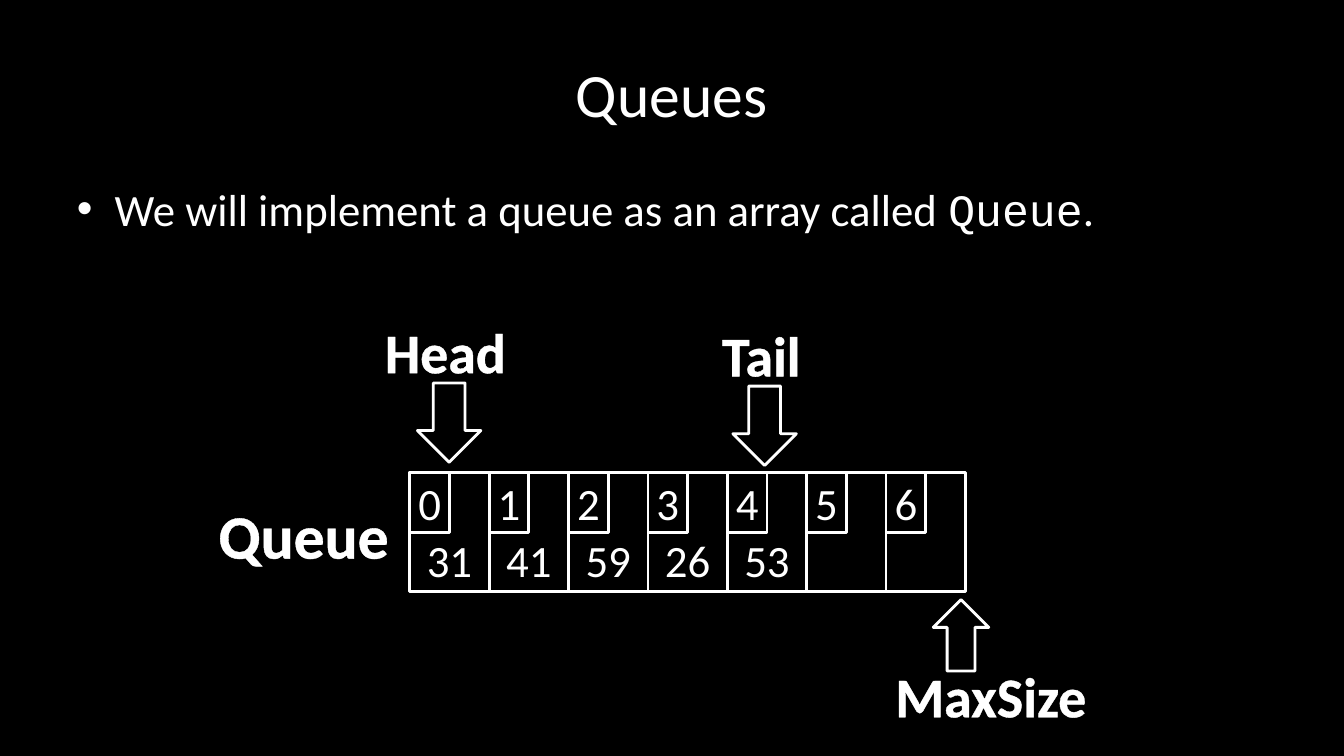
from lxml.etree import SubElement
from pptx import Presentation
from pptx.dml.color import RGBColor
from pptx.enum.shapes import MSO_SHAPE
from pptx.enum.text import MSO_ANCHOR, PP_ALIGN
from pptx.oxml.ns import qn
from pptx.util import Cm, Pt

BLACK = RGBColor(0x00, 0x00, 0x00)
WHITE = RGBColor(0xFF, 0xFF, 0xFF)
BODY_FONT = "Calibri"
CODE_FONT = "Courier New"

# Array geometry in centimetres
VALUES = ["31", "41", "59", "26", "53", "", ""]
ARRAY_LEFT, ARRAY_TOP = 10.33, 11.91
CELL_WIDTH, CELL_HEIGHT = 2, 3


def add_bullet(paragraph):
    properties = paragraph._p.get_or_add_pPr()
    properties.set("marL", str(Cm(0.95)))
    properties.set("indent", str(Cm(-0.95)))
    SubElement(properties, qn("a:buFont"), typeface="Arial")
    SubElement(properties, qn("a:buChar"), char="•")


def outline_run(run):
    line = SubElement(run.font._element, qn("a:ln"), w=str(Pt(1.4)))
    fill = SubElement(line, qn("a:solidFill"))
    SubElement(fill, qn("a:srgbClr"), val=str(WHITE))


def set_text(shape, *runs, size=32, bold=False, outline=False, bullet=False,
             align=PP_ALIGN.CENTER, anchor=MSO_ANCHOR.MIDDLE, wrap=True,
             side_margin=0.25):
    """Fill a shape with one paragraph; each run is a (text, font) pair."""
    frame = shape.text_frame
    frame.word_wrap = wrap
    frame.vertical_anchor = anchor
    frame.margin_left = frame.margin_right = Cm(side_margin)
    paragraph = frame.paragraphs[0]
    if bullet:
        add_bullet(paragraph)
    paragraph.alignment = align
    for text, font_name in runs:
        run = paragraph.add_run()
        run.text = text
        if outline:
            outline_run(run)
        run.font.name = font_name
        run.font.size = Pt(size)
        run.font.bold = bold
        run.font.color.rgb = WHITE


def add_text_box(slide, left, top, width, height, *runs, **text_format):
    box = slide.shapes.add_textbox(Cm(left), Cm(top), Cm(width), Cm(height))
    set_text(box, *runs, **text_format)


def add_label(slide, text, left, top, width, height, size=40):
    add_text_box(slide, left, top, width, height, (text, BODY_FONT), size=size,
                 bold=True, outline=True, wrap=False, anchor=MSO_ANCHOR.TOP)


def add_outlined_shape(slide, kind, left, top, width, height, fill=None):
    shape = slide.shapes.add_shape(kind, Cm(left), Cm(top), Cm(width), Cm(height))
    shape.shadow.inherit = False
    if fill is None:
        shape.fill.background()
    else:
        shape.fill.solid()
        shape.fill.fore_color.rgb = fill
    shape.line.color.rgb = WHITE
    shape.line.width = Pt(2)
    return shape


def add_array(slide):
    # Cells with their values along the lower edge
    lefts = [ARRAY_LEFT + index * CELL_WIDTH for index in range(len(VALUES))]
    for left, value in zip(lefts, VALUES):
        cell = add_outlined_shape(slide, MSO_SHAPE.RECTANGLE, left, ARRAY_TOP,
                                  CELL_WIDTH, CELL_HEIGHT)
        if value:
            set_text(cell, (value, BODY_FONT), anchor=MSO_ANCHOR.BOTTOM,
                     side_margin=0)
    # Index boxes in the upper left corner of each cell
    for index, left in enumerate(lefts):
        corner = add_outlined_shape(slide, MSO_SHAPE.RECTANGLE, left, ARRAY_TOP,
                                    CELL_WIDTH / 2, CELL_HEIGHT / 2)
        set_text(corner, (str(index), BODY_FONT), side_margin=0)


def main():
    presentation = Presentation()
    presentation.slide_width = Cm(33.87)
    presentation.slide_height = Cm(19.05)
    slide = presentation.slides.add_slide(presentation.slide_layouts[6])
    slide.background.fill.solid()
    slide.background.fill.fore_color.rgb = BLACK

    # Title and introduction
    add_text_box(slide, 1.69, 0.76, 30.48, 3.18, ("Queues", BODY_FONT), size=44)
    add_text_box(slide, 1.69, 4.45, 30.48, 12.57,
                 ("We will implement a queue as an array called ", BODY_FONT),
                 ("Queue", CODE_FONT), (".", BODY_FONT),
                 bullet=True, align=PP_ALIGN.LEFT, anchor=MSO_ANCHOR.TOP)

    # Array with its name
    add_array(slide)
    add_label(slide, "Queue", 5.23, 12.4, 4.85, 2.13, size=44)

    # Pointers into the array
    add_label(slide, "MaxSize", 22.28, 16.54, 5.38, 1.96)
    add_outlined_shape(slide, MSO_SHAPE.UP_ARROW, 23.52, 15.11, 1.4, 1.8, fill=BLACK)
    for text, left, top, width, arrow_left in (
            ("Head", 9.42, 7.87, 3.61, 10.52),
            ("Tail", 17.93, 7.95, 2.51, 18.47)):
        add_label(slide, text, left, top, width, 1.96)
        add_outlined_shape(slide, MSO_SHAPE.DOWN_ARROW, arrow_left, top + 1.78,
                           1.6, 2, fill=BLACK)

    presentation.save("out.pptx")


if __name__ == "__main__":
    main()
